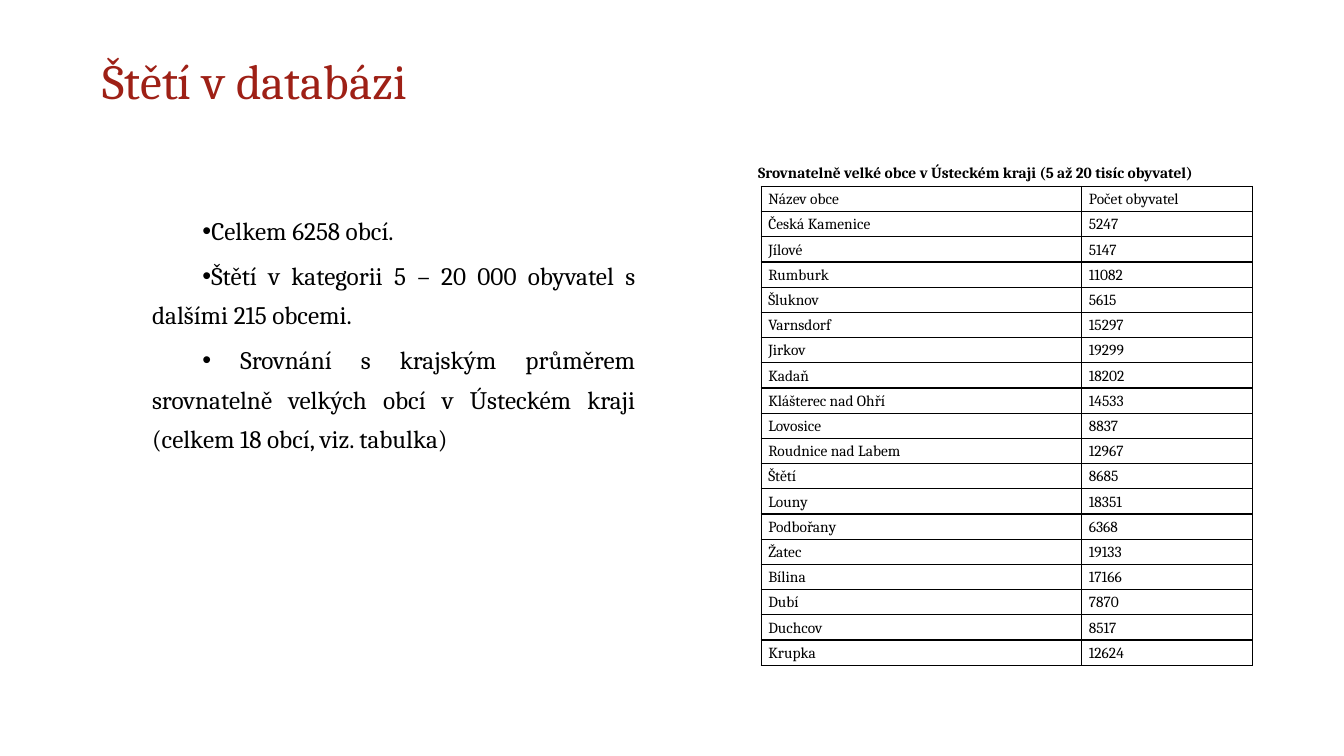
from dataclasses import dataclass

from lxml.etree import SubElement
from pptx import Presentation
from pptx.dml.color import RGBColor
from pptx.enum.text import MSO_ANCHOR as ANCHOR, PP_ALIGN as ALIGN
from pptx.oxml import parse_xml
from pptx.oxml.ns import nsdecls, qn
from pptx.util import Inches, Pt


@dataclass(frozen=True)
class Theme:
    """Font, colours and type sizes of the slide."""
    font: str = "Cambria"
    accent: str = "9E2016"
    ink: str = "000000"
    title: int = 35
    body: int = 18
    small: int = 11


BULLETS = [
    "Celkem 6258 obcí.",
    "Štětí v kategorii 5 – 20 000 obyvatel s dalšími 215 obcemi.",
    " Srovnání s krajským průměrem srovnatelně velkých obcí v Ústeckém kraji "
    "(celkem 18 obcí, viz. tabulka)",
]
TOWNS = [
    ("Název obce", "Počet obyvatel"),
    ("Česká Kamenice", "5247"),
    ("Jílové", "5147"),
    ("Rumburk", "11082"),
    ("Šluknov", "5615"),
    ("Varnsdorf", "15297"),
    ("Jirkov", "19299"),
    ("Kadaň", "18202"),
    ("Klášterec nad Ohří", "14533"),
    ("Lovosice", "8837"),
    ("Roudnice nad Labem", "12967"),
    ("Štětí", "8685"),
    ("Louny", "18351"),
    ("Podbořany", "6368"),
    ("Žatec", "19133"),
    ("Bílina", "17166"),
    ("Dubí", "7870"),
    ("Duchcov", "8517"),
    ("Krupka", "12624"),
]


class Deck:
    """Holds the theme and the current slide."""

    def __init__(self, s, theme):
        """Keep the slide and its theme."""
        self.s, self.theme = s, theme

    def add_text(self, p, text, size, color=None, bold=False, line=1.07, after=8, align=ALIGN.LEFT):
        """Add one styled run to a paragraph."""
        p.alignment, p.line_spacing, p.space_after = align, line, Pt(after)
        r = p.add_run()
        r.text = text
        r.font.name, r.font.size, r.font.bold = self.theme.font, Pt(size), bold
        r.font.color.rgb = RGBColor.from_string(color or self.theme.ink)

    def box(self, left, top, width, height, anchor=ANCHOR.TOP):
        """Add a wrapping text box and return its frame."""
        sp = self.s.shapes.add_textbox(Inches(left), Inches(top), Inches(width), Inches(height))
        tf = sp.text_frame
        tf.word_wrap, tf.vertical_anchor = True, anchor
        return tf

    def title(self, text):
        """Add the slide title."""
        tf = self.box(0.92, 0.1, 11.5, 1.45, ANCHOR.MIDDLE)
        self.add_text(tf.paragraphs[0], text, self.theme.title, self.theme.accent, line=0.9, after=0)

    def bullets(self, items):
        """Add the justified bullet list."""
        tf = self.box(0.92, 2, 5.48, 4.76)
        for i, text in enumerate(items):
            p = tf.add_paragraph() if i else tf.paragraphs[0]
            self.add_text(p, text, self.theme.body, line=1.3, after=4, align=ALIGN.JUSTIFY)
            pPr = p._p.get_or_add_pPr()
            pPr.set("marL", str(Inches(0.49)))
            pPr.set("indent", str(Inches(0.5)))
            SubElement(pPr, qn("a:buFont")).set("typeface", "Arial")
            SubElement(pPr, qn("a:buChar")).set("char", "•")

    def caption(self, text):
        """Add the bold line above the table."""
        tf = self.box(7.42, 1.56, 5.19, 0.29)
        self.add_text(tf.paragraphs[0], text, self.theme.small, bold=True)

    def borders(self, cell):
        """Draw a thin line on all four sides of a cell."""
        tcPr = cell._tc.get_or_add_tcPr()
        for i, side in enumerate("LRTB"):
            tcPr.insert(i, parse_xml(
                f'<a:ln{side} {nsdecls("a")} w="{Pt(1)}"><a:solidFill>'
                f'<a:srgbClr val="{self.theme.ink}"/></a:solidFill></a:ln{side}>'))

    def table(self, rows, widths, row_height):
        """Add the bordered table."""
        tbl = self.s.shapes.add_table(
            len(rows), len(widths), Inches(7.55), Inches(1.85),
            Inches(sum(widths)), Inches(row_height * len(rows))).table
        tbl.first_row = tbl.horz_banding = False
        for col, width in zip(tbl.columns, widths):
            col.width = Inches(width)
        for row, values in zip(tbl.rows, rows):
            row.height = Inches(row_height)
            for cell, text in zip(row.cells, values):
                cell.fill.background()
                cell.vertical_anchor = ANCHOR.MIDDLE
                cell.margin_left = cell.margin_right = Inches(0.07)
                cell.margin_top = cell.margin_bottom = 0
                p = cell.text_frame.paragraphs[0]
                self.add_text(p, text, self.theme.small, align=ALIGN.JUSTIFY)
                self.borders(cell)


def main():
    """Build and save the slide."""
    prs = Presentation()
    prs.slide_width, prs.slide_height = Inches(13.33), Inches(7.5)
    deck = Deck(prs.slides.add_slide(prs.slide_layouts[6]), Theme())
    deck.title("Štětí v databázi")
    deck.bullets(BULLETS)
    deck.table(TOWNS, (3.18, 1.69), 0.25)
    deck.caption("Srovnatelně velké obce v Ústeckém kraji (5 až 20 tisíc obyvatel)")
    prs.save("out.pptx")


if __name__ == "__main__":
    main()
